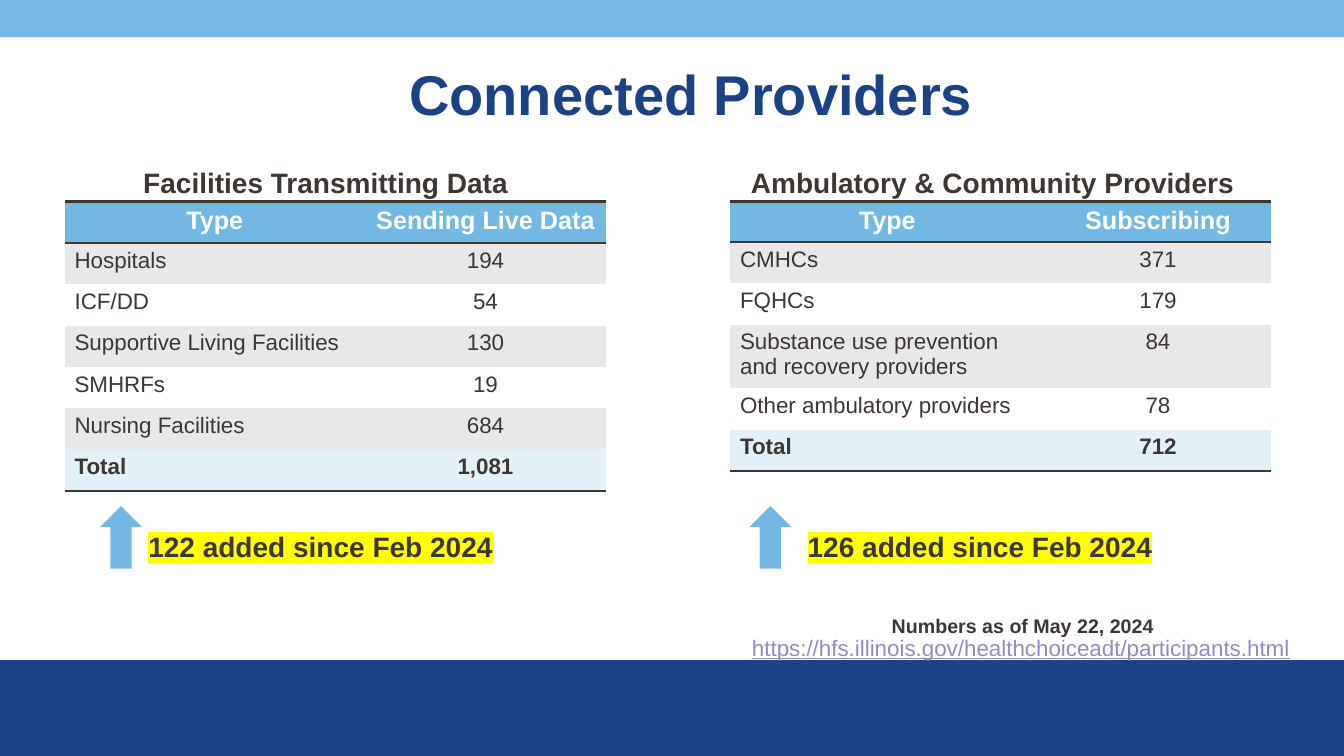
import pptx
import pptx.util
import pptx.dml.color
import pptx.enum.shapes
import pptx.enum.text
import pptx.oxml
import pptx.oxml.ns

COLOURS = {
    "navy": "1A4387", "sky": "75B9E5", "header": "73B8E3", "text": "3D3633",
    "white": "FFFFFF", "band": "E8E8E8", "total": "E3F1F9",
    "link": "928CC3", "highlight": "FFFF00",
}
WIDTH, HEIGHT = 13.33, 7.5
TABLE_TOP, TABLE_WIDTH, ROW = 2, 5.37, 0.41
HEADING_TOP, ARROW_TOP, ADDED_TOP = 1.63, 5.02, 5.24
NO_STYLE = "{2D5ABB26-0587-4C30-8999-92F81FD0307C}"
SHAPES = pptx.enum.shapes.MSO_SHAPE
CENTER = pptx.enum.text.PP_ALIGN.CENTER
LEFT = pptx.enum.text.PP_ALIGN.LEFT


def colour(name):
    return pptx.dml.color.RGBColor.from_string(COLOURS[name])


def box(left, top, width, height):
    return [pptx.util.Inches(length) for length in (left, top, width, height)]


def format_paragraph(paragraph, size, colour_name, bold=True, align=CENTER):
    paragraph.alignment = align
    font = paragraph.font
    font.name, font.size, font.bold = "Arial", pptx.util.Pt(size), bold
    font.color.rgb = colour(colour_name)


def add_block(slide, preset, place, fill):
    shape = slide.shapes.add_shape(preset, *box(*place))
    shape.shadow.inherit = False
    shape.fill.solid()
    shape.fill.fore_color.rgb = colour(fill)
    shape.line.fill.background()


def add_label(slide, text, place, size, highlighted=False):
    frame = slide.shapes.add_textbox(*box(*place)).text_frame
    frame.word_wrap = True
    frame.margin_left = frame.margin_right = frame.margin_bottom = 0
    frame.margin_top = pptx.util.Inches(0.01)
    paragraph = frame.paragraphs[0]
    run = paragraph.add_run()
    run.text = text
    format_paragraph(paragraph, size, "text")
    if highlighted:
        run._r.get_or_add_rPr().append(pptx.oxml.parse_xml(
            f'<a:highlight {pptx.oxml.ns.nsdecls("a")}>'
            f'<a:srgbClr val="{COLOURS["highlight"]}"/></a:highlight>'))


def add_border(cell, side):
    cell._tc.get_or_add_tcPr().append(pptx.oxml.parse_xml(
        f'<a:{side} {pptx.oxml.ns.nsdecls("a")} w="{pptx.util.Pt(2)}"><a:solidFill>'
        f'<a:srgbClr val="{COLOURS["text"]}"/></a:solidFill></a:{side}>'))


def add_provider_table(slide, left, columns, heights, rows):
    frame = slide.shapes.add_table(
        len(rows), len(columns), *box(left, TABLE_TOP, TABLE_WIDTH, sum(heights)))
    table = frame.table
    table.horz_banding = False
    table._tbl.tblPr.find(pptx.oxml.ns.qn("a:tableStyleId")).text = NO_STYLE
    for column, width in zip(table.columns, columns):
        column.width = pptx.util.Inches(width)
    last = len(rows) - 1
    for index, (values, height) in enumerate(zip(rows, heights)):
        table.rows[index].height = pptx.util.Inches(height)
        if index == 0:
            fill, sides = "header", ("lnT", "lnB")
        elif index == last:
            fill, sides = "total", ("lnB",)
        else:
            fill, sides = ("band" if index % 2 else "white"), ()
        for position, value in enumerate(values):
            cell = table.cell(index, position)
            cell.text = value
            for side in sides:
                add_border(cell, side)
            cell.fill.solid()
            cell.fill.fore_color.rgb = colour(fill)
            format_paragraph(
                cell.text_frame.paragraphs[0],
                18 if index == 0 else 16,
                "white" if index == 0 else "text",
                bold=index in (0, last),
                align=CENTER if index == 0 or position else LEFT)


def add_title(slide, text):
    title = slide.shapes.title
    title.left, title.top, title.width, title.height = box(1.29, 0.37, 11.12, 1.19)
    title.text_frame.text = text
    title.text_frame.vertical_anchor = pptx.enum.text.MSO_ANCHOR.MIDDLE
    paragraph = title.text_frame.paragraphs[0]
    paragraph.line_spacing = 0.9
    format_paragraph(paragraph, 40, "navy")


def add_address(slide, text):
    frame = slide.shapes.add_textbox(*box(7.36, 6.24, 5.95, 0.37)).text_frame
    frame.word_wrap = True
    frame.text = text
    paragraph = frame.paragraphs[0]
    format_paragraph(paragraph, 16, "link", bold=False, align=LEFT)
    paragraph.font.underline = True


def main():
    presentation = pptx.Presentation()
    presentation.slide_width = pptx.util.Inches(WIDTH)
    presentation.slide_height = pptx.util.Inches(HEIGHT)
    slide = presentation.slides.add_slide(presentation.slide_layouts[5])

    # Bands and title
    add_block(slide, SHAPES.RECTANGLE, (0, 6.55, WIDTH, HEIGHT - 6.55), "navy")
    add_block(slide, SHAPES.RECTANGLE, (0, 0, WIDTH, 0.37), "sky")
    add_title(slide, "Connected Providers")

    # Facilities
    add_label(slide, "Facilities Transmitting Data", (0.84, HEADING_TOP, 4.78, 0.35), 20)
    add_provider_table(slide, 0.64, (2.98, 2.39), [ROW] * 7, [
        ("Type", "Sending Live Data"),
        ("Hospitals", "194"),
        ("ICF/DD", "54"),
        ("Supportive Living Facilities", "130"),
        ("SMHRFs", "19"),
        ("Nursing Facilities", "684"),
        ("Total", "1,081"),
    ])

    # Ambulatory and community providers
    add_label(slide, "Ambulatory & Community Providers", (7.18, HEADING_TOP, 5.33, 0.35), 20)
    add_provider_table(slide, 7.24, (3.12, 2.25), [0.37, ROW, ROW, 0.59, ROW, ROW], [
        ("Type", "Subscribing"),
        ("CMHCs", "371"),
        ("FQHCs", "179"),
        ("Substance use prevention and recovery providers", "84"),
        ("Other ambulatory providers", "78"),
        ("Total", "712"),
    ])

    # Growth since February
    for arrow_left, label_left, count in ((0.99, 0.79, 122), (7.43, 7.33, 126)):
        add_block(slide, SHAPES.UP_ARROW, (arrow_left, ARROW_TOP, 0.42, 0.62), "header")
        add_label(slide, f"{count} added since Feb 2024",
                  (label_left, ADDED_TOP, 4.78, 0.35), 20, highlighted=True)

    # Date and source
    add_label(slide, "Numbers as of May 22, 2024", (7.48, 6.08, 5.33, 0.25), 14)
    add_address(slide, "https://hfs.illinois.gov/healthchoiceadt/participants.html")

    presentation.save("out.pptx")


if __name__ == "__main__":
    main()
